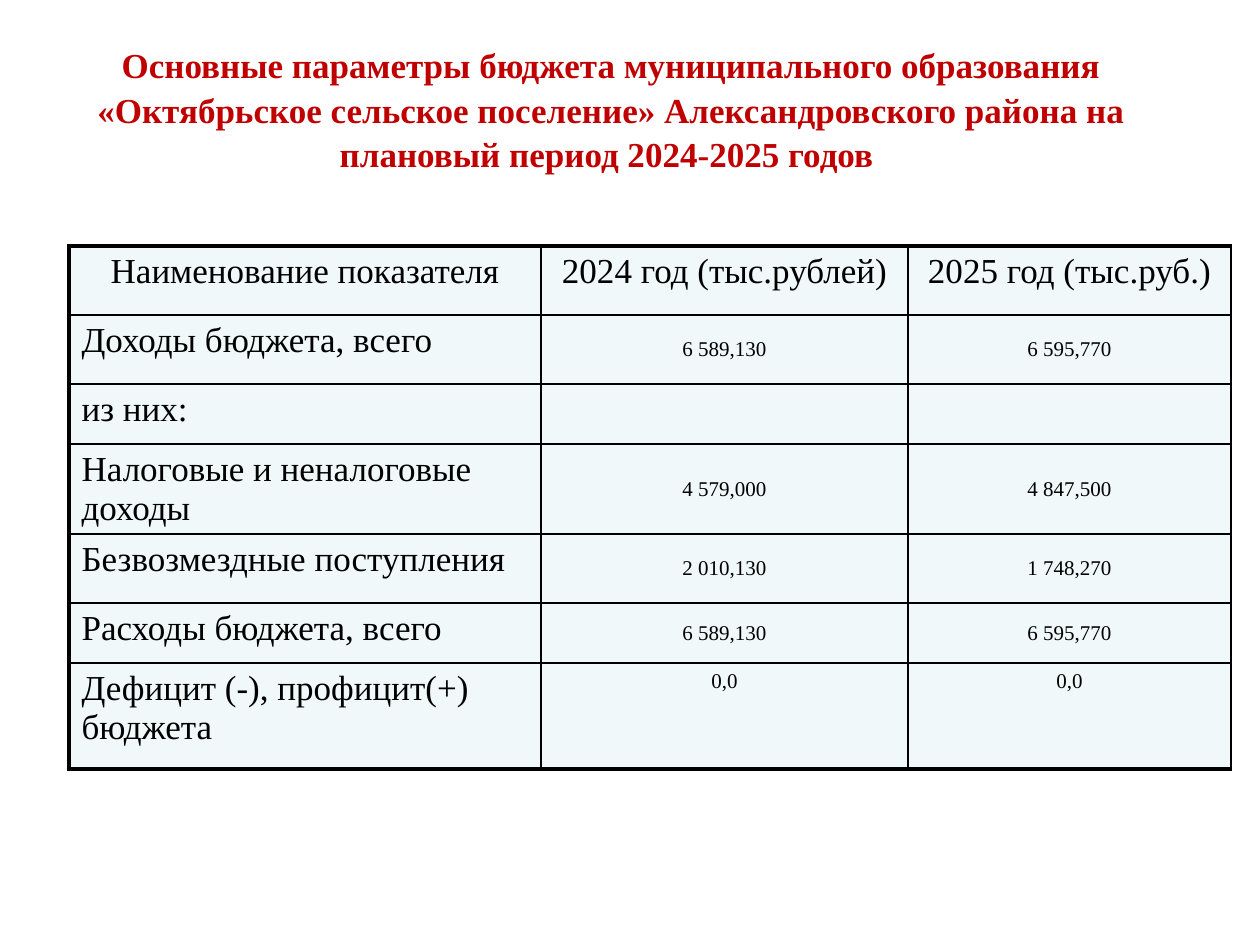
from lxml.etree import SubElement as Sub
from pptx import Presentation
from pptx.dml.color import RGBColor as Rgb
from pptx.enum.text import MSO_ANCHOR as Anchor, MSO_AUTO_SIZE as Fit, PP_ALIGN as Align
from pptx.oxml.ns import qn
from pptx.util import Pt

PX = 914400 // 126
FONT = "Times New Roman"
HUES = {"title": "C00000", "ink": "000000", "cell": "F0F8F9"}
TITLE = ("Основные параметры бюджета муниципального образования "
         "«Октябрьское сельское поселение» Александровского района "
         "на плановый период 2024-2025 годов ")
ROWS = [
    ("Наименование показателя", "2024 год (тыс.рублей)", "2025 год (тыс.руб.)"),
    ("Доходы бюджета, всего", "6 589,130", "6 595,770"),
    ("из них:", "", ""),
    ("Налоговые и неналоговые доходы", "4 579,000", "4 847,500"),
    ("Безвозмездные поступления", "2 010,130", "1 748,270"),
    ("Расходы бюджета, всего", "6 589,130", "6 595,770"),
    ("Дефицит (-), профицит(+) бюджета", "0,0", "0,0"),
]
WIDTHS = [472, 367, 323]
HEIGHTS = [69, 69, 60, 68, 69, 60, 106]


def style(para, size, hue, align, bold=False):
    para.alignment = align
    for run in para.runs:
        font = run.font
        font.name, font.size, font.bold = FONT, Pt(size), bold
        font.color.rgb = Rgb.from_string(HUES[hue])


def edge(cell, side, width):
    line = Sub(cell._tc.get_or_add_tcPr(), qn("a:ln" + side), w=str(Pt(width)))
    fill = Sub(line, qn("a:solidFill"))
    Sub(fill, qn("a:srgbClr"), val=HUES["ink"])


def add_title(slide, x, y, w, h):
    head = slide.shapes.title
    head.left, head.top, head.width, head.height = (n * PX for n in (x, y, w, h))
    frame = head.text_frame
    frame.text = TITLE
    frame.auto_size = Fit.NONE
    frame.vertical_anchor = Anchor.MIDDLE
    para = frame.paragraphs[0]
    para.line_spacing = 1.05
    style(para, 20, "title", Align.CENTER, True)


def fill_cell(cell, text, row, col):
    last = len(ROWS) - 1
    heavy = {"L": col == 0, "R": False, "T": row == 0, "B": row == last}
    for side, thick in heavy.items():
        edge(cell, side, 2.25 if thick else 1)
    cell.fill.solid()
    cell.fill.fore_color.rgb = Rgb.from_string(HUES["cell"])
    cell.text_frame.text = text
    value = row > 0 and col > 0
    if value and row < last:
        cell.vertical_anchor = Anchor.MIDDLE
        cell.margin_left = cell.margin_right = 9 * PX
        cell.margin_top = cell.margin_bottom = 0
    align = Align.CENTER if row == 0 or col > 0 else Align.LEFT
    style(cell.text_frame.paragraphs[0], 12 if value else 20, "ink", align)


def add_grid(slide, x, y):
    w, h = sum(WIDTHS), sum(HEIGHTS)
    table = slide.shapes.add_table(
        len(ROWS), len(WIDTHS), x * PX, y * PX, w * PX, h * PX).table
    table.first_row = table.horz_banding = False
    for col, width in zip(table.columns, WIDTHS):
        col.width = width * PX
    for row, height in zip(table.rows, HEIGHTS):
        row.height = height * PX
    for r, texts in enumerate(ROWS):
        for c, text in enumerate(texts):
            fill_cell(table.cell(r, c), text, r, c)


def main():
    deck = Presentation()
    deck.slide_width, deck.slide_height = 1260 * PX, 945 * PX
    slide = deck.slides.add_slide(deck.slide_layouts[5])
    add_title(slide, 20, 38, 1182, 140)
    add_grid(slide, 69, 246)
    deck.save("out.pptx")


if __name__ == "__main__":
    main()
